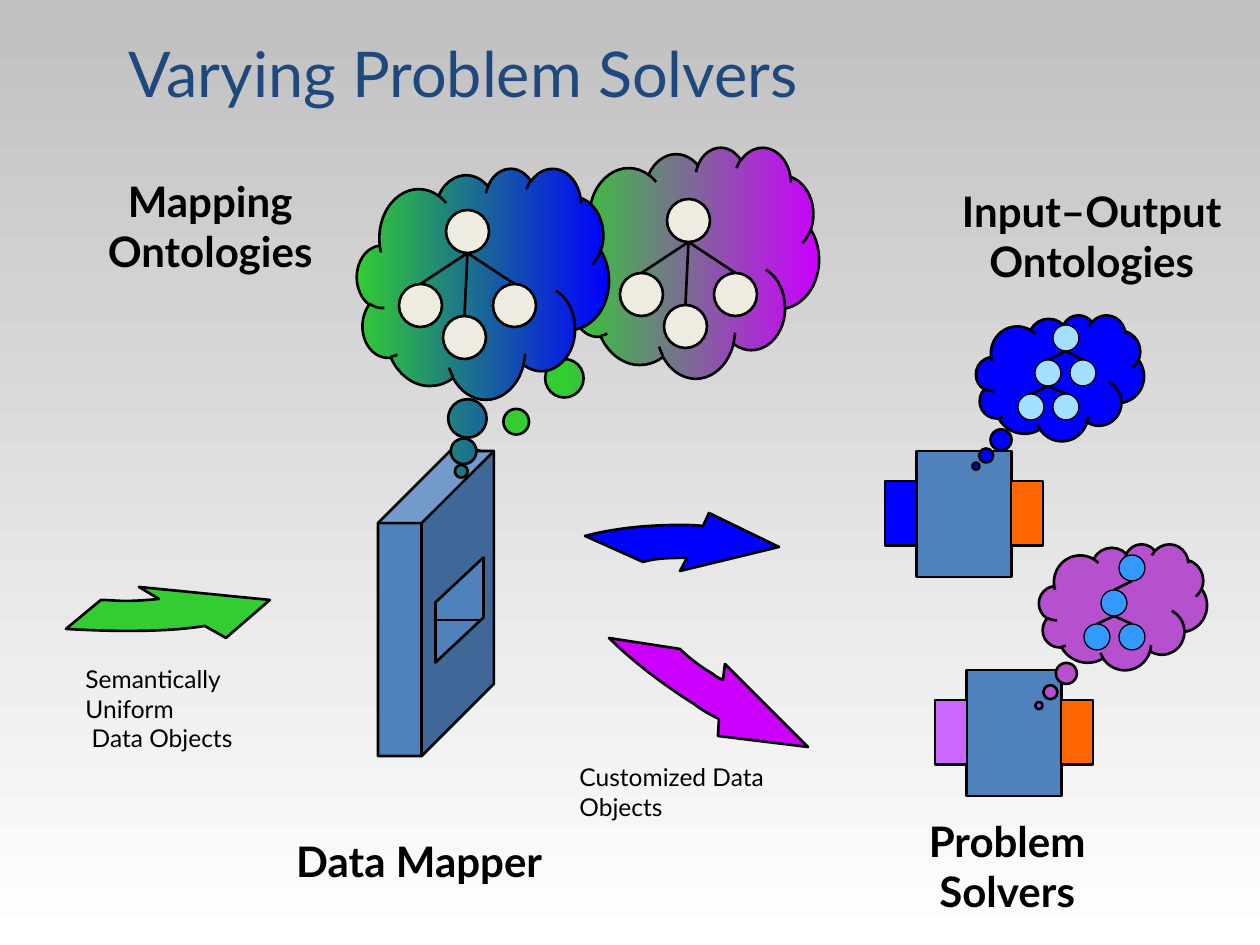
from pptx import Presentation
from pptx.dml.color import RGBColor
from pptx.enum.shapes import MSO_CONNECTOR, MSO_SHAPE
from pptx.enum.text import MSO_ANCHOR, PP_ALIGN
from pptx.oxml.ns import qn
from pptx.util import Pt
from lxml.etree import SubElement

SCALE = 914400 / 126
HUES = {
    "black": "000000", "title": "1F497D", "steel": "4F81BD", "cream": "EEECE1",
    "green": "33CC33", "blue": "0000FF", "purple": "CC00FF", "lilac": "CC66FF",
    "orange": "FF6600", "plum": "B750CF", "ice": "A3E0FF", "sky": "3399FF",
    "gray": "C0C0C0", "white": "FFFFFF",
}
MAP = [(47, 0, None), (0, 74, 0), (94, 74, 0), (44, 106, 0)]
INPUT = [(35, 0, None), (17, 35, 0), (52, 35, 0), (0, 69, 1), (35, 69, 1)]
OUTPUT = [(35, 0, None), (17, 35, 0), (0, 69, 1), (35, 69, 1)]
GREEN = [(93, 12), (83, 13), (71, 14), (60, 14), (51, 14), (42, 13), (35, 13),
         (0, 42), (18, 43), (40, 44), (60, 44), (88, 44), (115, 43), (139, 39),
         (160, 51), (204, 13), (73, 0)]
BLUE = [(102, 45), (99, 45), (95, 45), (93, 45), (80, 45), (68, 46), (58, 49),
        (0, 23), (26, 16), (59, 12), (93, 12), (101, 12), (109, 12), (118, 13),
        (124, 0), (194, 34), (95, 58)]
PURPLE = [(114, 42), (110, 40), (107, 39), (104, 36), (92, 29), (80, 20), (71, 11),
          (0, 0), (22, 22), (53, 46), (85, 66), (94, 73), (102, 77), (110, 81),
          (109, 98), (199, 109), (116, 26)]


def px(num):
    return round(num * SCALE)


def hue(name):
    return RGBColor.from_string(HUES[name])


def blend(fill, names, angle):
    fill.gradient()
    fill.gradient_angle = angle
    for stop, name in zip(fill.gradient_stops, names):
        stop.color.rgb = hue(name)


def style(shape, color, width=1.5):
    shape.shadow.inherit = False
    if isinstance(color, tuple):
        blend(shape.fill, color, 0)
    else:
        shape.fill.solid()
        shape.fill.fore_color.rgb = hue(color)
    shape.line.color.rgb = hue("black")
    shape.line.width = Pt(width)


def block(shapes, kind, box, color, adjust=(), width=1.5):
    shape = shapes.add_shape(kind, *map(px, box))
    for i, value in enumerate(adjust):
        shape.adjustments[i] = value
    style(shape, color, width)
    return shape


def line(shapes, *ends):
    link = shapes.add_connector(MSO_CONNECTOR.STRAIGHT, *map(px, ends))
    link.line.color.rgb = hue("black")
    link.line.width = Pt(1.5)
    SubElement(link._element.spPr, qn("a:effectLst"))


def cloud(shapes, box, color, tail):
    block(shapes, MSO_SHAPE.CLOUD_CALLOUT, box, color, tail)


def tree(shapes, left, top, size, nodes, color, width):
    group = shapes.add_group_shape().shapes
    half = size / 2
    for x, y, root in nodes:
        if root is not None:
            up = nodes[root]
            line(group, left + up[0] + half, top + up[1] + size,
                 left + x + half, top + y)
    for x, y, root in nodes:
        block(group, MSO_SHAPE.OVAL, (left + x, top + y, size, size), color, width=width)


def solver(shapes, left, top, color):
    group = shapes.add_group_shape().shapes
    block(group, MSO_SHAPE.CROSS, (left, top, 158, 126), "steel", (0.25,))
    for x, tint in ((0, color), (126, "orange")):
        block(group, MSO_SHAPE.RECTANGLE, (left + x, top + 30, 32, 64), tint)


def curve(ends, steps=8):
    spots = []
    for i in range(steps + 1):
        t = i / steps
        parts = ((1 - t) ** 3, 3 * t * (1 - t) ** 2, 3 * t * t * (1 - t), t ** 3)
        spots.append(tuple(sum(p * e[axis] for p, e in zip(parts, ends))
                           for axis in (0, 1)))
    return spots


def arrow(shapes, left, top, points, color):
    spots = []
    for i in (0, 3, 7, 10):
        spots += curve(points[i:i + 4])
    spots += points[14:]
    spots = [(px(left + x), px(top + y)) for x, y in spots]
    build = shapes.build_freeform(*spots[0])
    build.add_line_segments(spots[1:])
    style(build.convert_to_shape(), color)


def mapper(shapes, left, top):
    block(shapes, MSO_SHAPE.CUBE, (left, top, 116, 305), "steel", (0.622,))
    slot = block(shapes, MSO_SHAPE.PARALLELOGRAM, (left + 29, top + 135, 105, 48),
                 "steel", (0.935,))
    slot.rotation = 270
    slot._element.spPr.xfrm.set("flipH", "1")
    line(shapes, left + 102, top + 169, left + 58, top + 169)


def label(shapes, box, text, size=24, color="black", bold=True,
          align=PP_ALIGN.CENTER, anchor=MSO_ANCHOR.TOP, inset=13):
    frame = shapes.add_textbox(*map(px, box)).text_frame
    frame.word_wrap = True
    frame.vertical_anchor = anchor
    frame.margin_right = px(inset)
    para = frame.paragraphs[0]
    para.text = text
    para.alignment = align
    para.font.name = "Lato"
    para.font.size = Pt(size)
    para.font.bold = bold
    para.font.color.rgb = hue(color)


def note(shapes, box, text):
    label(shapes, box, text, 14, bold=False, align=PP_ALIGN.LEFT, inset=32)


def main():
    deck = Presentation()
    deck.slide_width, deck.slide_height = px(1260), px(945)
    slide = deck.slides.add_slide(deck.slide_layouts[6])
    blend(slide.background.fill, ("gray", "white"), 270)
    shapes = slide.shapes

    cloud(shapes, (567, 147, 252, 231), ("green", "purple"), (-0.855, 0.84))
    tree(shapes, 620, 199, 43, MAP, "cream", 1.5)
    mapper(shapes, 378, 451)
    solver(shapes, 935, 670, "lilac")
    solver(shapes, 885, 451, "blue")
    arrow(shapes, 609, 638, PURPLE, "purple")
    arrow(shapes, 585, 513, BLUE, "blue")
    arrow(shapes, 66, 587, GREEN, "green")
    cloud(shapes, (357, 168, 252, 231), ("green", "blue"), (-0.086, 0.813))
    tree(shapes, 399, 210, 43, MAP, "cream", 1.5)
    cloud(shapes, (976, 315, 168, 126), "blue", (-0.5, 0.7))
    tree(shapes, 1018, 325, 26, INPUT, "ice", 0.75)
    cloud(shapes, (1039, 544, 168, 126), "plum", (-0.5, 0.783))
    tree(shapes, 1084, 555, 26, OUTPUT, "sky", 0.75)

    label(shapes, (262, 829, 315, 63), "Data Mapper")
    label(shapes, (53, 169, 315, 115), "Mapping Ontologies")
    label(shapes, (850, 809, 315, 115), "Problem Solvers")
    label(shapes, (924, 179, 336, 115), "Input–Output Ontologies")
    label(shapes, (116, 21, 1071, 95), "Varying Problem Solvers", 36, "title",
          False, PP_ALIGN.LEFT, MSO_ANCHOR.BOTTOM)
    note(shapes, (567, 756, 296, 72), "Customized Data Objects")
    note(shapes, (73, 658, 255, 101), "Semantically Uniform\v Data Objects")
    deck.save("out.pptx")


if __name__ == "__main__":
    main()
